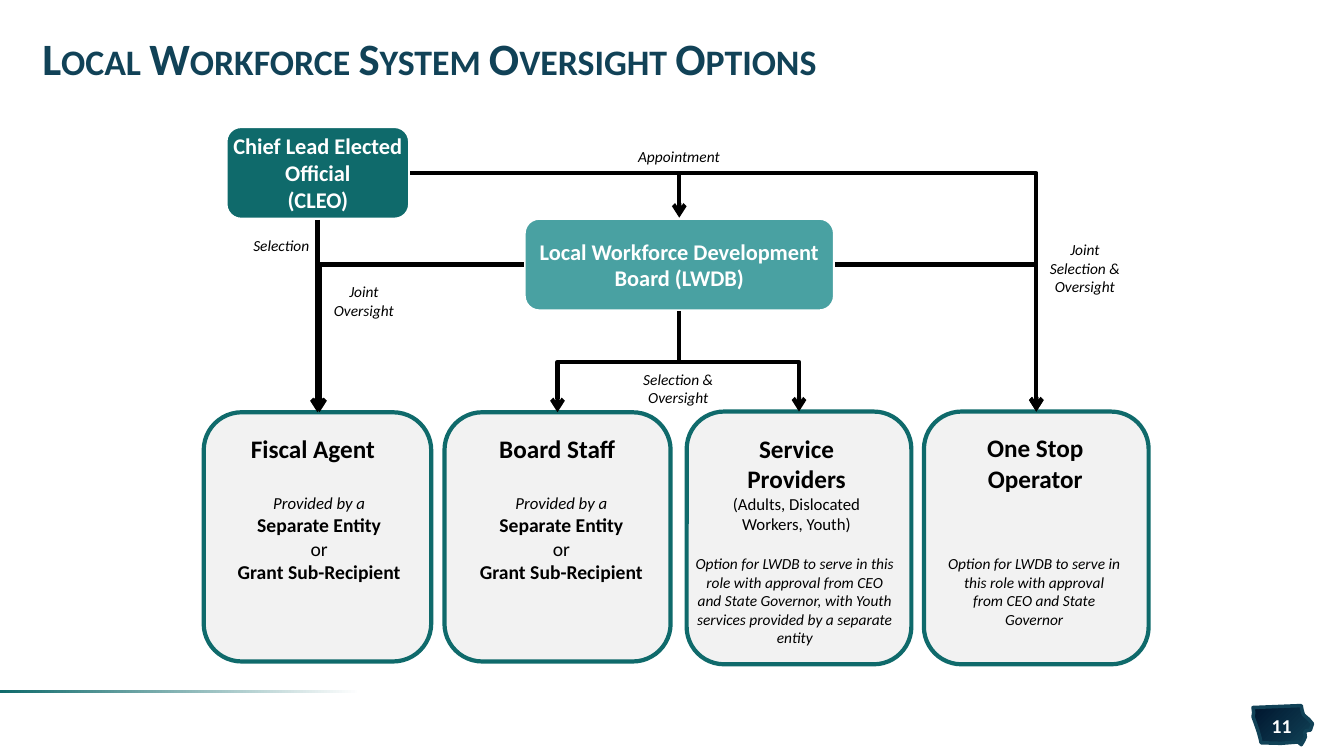
from lxml import etree
from pptx import Presentation
from pptx.dml.color import RGBColor
from pptx.enum.shapes import MSO_CONNECTOR, MSO_SHAPE
from pptx.enum.text import MSO_ANCHOR, MSO_AUTO_SIZE, PP_ALIGN
from pptx.oxml.ns import qn
from pptx.util import Pt

ROUNDED, RECTANGLE = MSO_SHAPE.ROUNDED_RECTANGLE, MSO_SHAPE.RECTANGLE
STRAIGHT, ELBOW = MSO_CONNECTOR.STRAIGHT, MSO_CONNECTOR.ELBOW
CENTER, LEFT = PP_ALIGN.CENTER, PP_ALIGN.LEFT
MIDDLE, TOP = MSO_ANCHOR.MIDDLE, MSO_ANCHOR.TOP
NO_AUTOFIT = MSO_AUTO_SIZE.NONE

FONT = "Calibri"
NAVY, TEAL, LIGHT_TEAL = "114257", "0F6A6B", "49A1A2"
BLACK, WHITE, GRAY = "000000", "FFFFFF", "F2F2F2"

STATE_OUTLINE = [
    (34.5, 0), (0, 1.4), (0.5, 5), (0, 8), (1.5, 12), (3.6, 18), (5, 23),
    (5.8, 26.6), (20, 27), (32.4, 26), (34.5, 28), (36, 25.5), (37.4, 22.5),
    (37, 19), (38, 18), (41, 17.5), (42.5, 13), (40, 10), (36, 6.5), (35, 3),
]

ENTITY = [
    ("Provided by a\n", 12, False, True),
    ("Separate Entity\n", 14, True, False),
    ("or\n", 14, False, False),
    ("Grant Sub-Recipient", 14, True, False),
]
OPTION = "Option for LWDB to serve in this role with approval from CEO and State Governor"
YOUTH_OPTION = OPTION + ", with Youth services provided by a separate entity"

CARDS = [
    {"box": (145.5, 294.5, 162.5, 178), "title": [[("Fiscal Agent", 18, True, False)]],
     "title_box": (12, 11.5, 132, 29), "body": ENTITY, "body_box": (15, 54, 135, 73)},
    {"box": (317.5, 294.5, 161.5, 178), "title": [[("Board Staff", 18, True, False)]],
     "title_box": (18.5, 11.5, 124, 29), "body": ENTITY, "body_box": (16, 54, 135, 73)},
    {"box": (490.5, 294, 160.5, 180.5),
     "title": [[("Service Providers", 18, True, False)],
               [("(Adults, Dislocated Workers, Youth)", 12, False, False)]],
     "title_box": (16.5, 12, 124, 80), "body": [(YOUTH_OPTION, 11, False, True)],
     "body_box": (-2, 98.5, 158.5, 74)},
    {"box": (660, 294, 160.5, 180.5), "title": [[("One Stop Operator", 18, True, False)]],
     "title_box": (17.5, 11.5, 124, 51), "body": [(OPTION, 11, False, True)],
     "body_box": (10, 98.5, 137.5, 60)},
]

LABELS = [
    ("Appointment", (445, 101.5, 80, 21)),
    ("Selection", (161.5, 165, 79, 21)),
    ("Joint\nSelection &\nOversight", (736, 168, 78, 48)),
    ("Joint\nOversight", (221, 198, 78, 34)),
    ("Selection & Oversight", (445, 260.5, 79, 34)),
]


def color(hex_value):
    """Turn a hex string into a colour."""
    return RGBColor.from_string(hex_value)


def lengths(box):
    """Turn a box in points into lengths."""
    return [Pt(value) for value in box]


def add_run(paragraph, text, size, bold, italic, hex_value):
    """Add formatted text, with each newline as a line break."""
    for index, line in enumerate(text.split("\n")):
        if index:
            paragraph.add_line_break()
        if line:
            run = paragraph.add_run()
            run.text = line
            font = run.font
            font.name, font.size, font.bold, font.italic = FONT, Pt(size), bold, italic
            font.color.rgb = color(hex_value)


def write(shape, paragraphs, hex_value=BLACK, anchor=TOP, wrap=True):
    """Fill a shape with centred paragraphs made of runs."""
    frame = shape.text_frame
    frame.word_wrap = wrap
    frame.vertical_anchor = anchor
    for index, runs in enumerate(paragraphs):
        paragraph = frame.add_paragraph() if index else frame.paragraphs[0]
        paragraph.alignment = CENTER
        for run in runs:
            add_run(paragraph, *run, hex_value)


def add_text(slide, box, paragraphs, wrap=True):
    """Add a text box."""
    write(slide.shapes.add_textbox(*lengths(box)), paragraphs, wrap=wrap)


def add_rounded_box(slide, box, fill, line):
    """Add a rounded rectangle with a 3-point outline."""
    shape = slide.shapes.add_shape(ROUNDED, *lengths(box))
    shape.shadow.inherit = False
    shape.fill.solid()
    shape.fill.fore_color.rgb = color(fill)
    shape.line.color.rgb = color(line)
    shape.line.width = Pt(3)
    return shape


def set_gradient(shape, angle, stops):
    """Give a shape a two-stop linear gradient."""
    shape.shadow.inherit = False
    shape.fill.gradient()
    shape.fill.gradient_angle = angle
    for stop, (position, hex_value) in zip(shape.fill.gradient_stops, stops):
        stop.position = position
        stop.color.rgb = color(hex_value)


def add_line(slide, start, end, arrow=True):
    """Add a connector, bent once when its ends are not aligned."""
    bent = start[0] != end[0] and start[1] != end[1]
    connector = slide.shapes.add_connector(ELBOW if bent else STRAIGHT, *lengths(start + end))
    connector.line.color.rgb = color(BLACK)
    connector.line.width = Pt(3)
    properties = connector._element.spPr
    if bent:
        properties.find(qn("a:prstGeom")).set("prst", "bentConnector2")
    if arrow:
        etree.SubElement(properties.find(qn("a:ln")), qn("a:tailEnd"), type="arrow")
    etree.SubElement(properties, qn("a:effectLst"))


def add_title(slide, box, text):
    """Place the slide title in small capitals."""
    title = slide.shapes.title
    title.left, title.top, title.width, title.height = lengths(box)
    frame = title.text_frame
    frame.auto_size = NO_AUTOFIT
    frame.vertical_anchor = MIDDLE
    paragraph = frame.paragraphs[0]
    paragraph.alignment = LEFT
    paragraph.line_spacing = 0.85
    add_run(paragraph, text, 32, True, False, NAVY)
    paragraph.runs[0].font._element.set("cap", "small")


def add_footer(slide, box, number):
    """Draw the fading rule and the page badge."""
    left, top, width, height = box
    rule = slide.shapes.add_shape(RECTANGLE, *lengths((left, top, 274, 2.2)))
    set_gradient(rule, 180, [(0.06, WHITE), (1, TEAL)])
    rule.line.fill.background()
    points = [(Pt(left + width - 65 + x), Pt(top + 11 + y)) for x, y in STATE_OUTLINE]
    builder = slide.shapes.build_freeform(*points[0])
    builder.add_line_segments(points[1:], close=True)
    badge = builder.convert_to_shape()
    set_gradient(badge, 315, [(0, "00162E"), (1, NAVY)])
    badge.line.color.rgb = color(NAVY)
    badge.line.width = Pt(2.5)
    page = slide.shapes.add_textbox(*lengths((left + width - 63, top + 16.5, 37, 17)))
    page.text_frame.margin_left = page.text_frame.margin_right = 0
    write(page, [[(number, 14, True, False)]], WHITE, MIDDLE)


def add_authority(slide, box, text, fill):
    """Add a governing body as a filled box."""
    shape = add_rounded_box(slide, box, fill, WHITE)
    frame = shape.text_frame
    frame.margin_left = frame.margin_right = frame.margin_top = frame.margin_bottom = 0
    write(shape, [[(text, 16, True, False)]], WHITE, MIDDLE)


def add_card(slide, box, title, title_box, body, body_box):
    """Add a role card with its heading and provider text."""
    add_rounded_box(slide, box, GRAY, TEAL)
    for paragraphs, (x, y, width, height) in ((title, title_box), ([body], body_box)):
        add_text(slide, (box[0] + x, box[1] + y, width, height), paragraphs,
                 wrap=paragraphs != [ENTITY])


def add_chart_of_oversight(slide, official, board):
    """Draw the two authorities, the role cards and the links between them."""
    add_authority(slide, official, "Chief Lead Elected Official\n(CLEO)", TEAL)
    add_authority(slide, board, "Local Workforce Development Board (LWDB)", LIGHT_TEAL)
    for card in CARDS:
        add_card(slide, **card)
    fiscal, staff, providers, operator = [
        (card["box"][0] + card["box"][2] / 2, card["box"][1]) for card in CARDS]
    official_right = (official[0] + official[2], official[1] + official[3] / 2)
    board_middle = board[1] + board[3] / 2
    board_center = board[0] + board[2] / 2
    fork = (board_center, 258.5)
    add_line(slide, official_right, (board_center, board[1]))
    add_line(slide, official_right, operator)
    add_line(slide, (board[0] + board[2], board_middle), operator)
    add_line(slide, (board[0], board_middle), (fiscal[0] + 1.5, fiscal[1]))
    add_line(slide, (fiscal[0], official[1] + official[3]), fiscal)
    add_line(slide, (board_center, board[1] + board[3]), fork, arrow=False)
    for target in (staff, providers):
        add_line(slide, fork, target)
    for text, box in LABELS:
        add_text(slide, box, [[(text, 11, False, True)]])


def main():
    """Build and save the presentation."""
    presentation = Presentation()
    presentation.slide_width, presentation.slide_height = Pt(960), Pt(540)
    slide = presentation.slides.add_slide(presentation.slide_layouts[5])
    add_footer(slide, (0, 493, 960, 47), "11")
    add_title(slide, (23, 17.5, 914, 54), "Local Workforce System Oversight Options")
    add_chart_of_oversight(slide, (161, 90, 132, 67), (374, 155.5, 222.5, 67))
    presentation.save("out.pptx")


if __name__ == "__main__":
    main()
